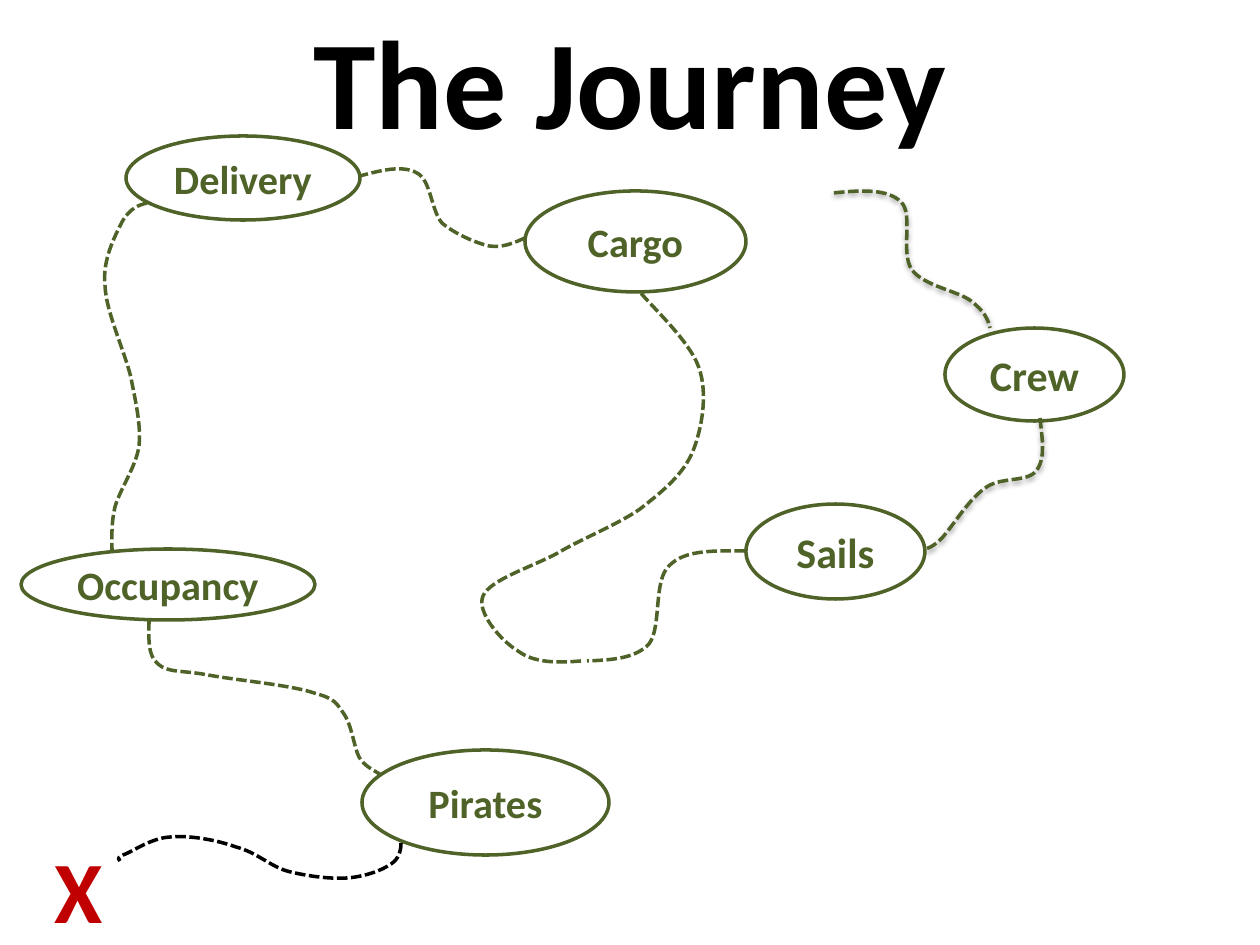
from dataclasses import dataclass

from pptx import Presentation
from pptx.dml.color import RGBColor
from pptx.enum.dml import MSO_LINE
from pptx.enum.shapes import MSO_SHAPE
from pptx.enum.text import MSO_ANCHOR as Anchor, MSO_AUTO_SIZE as AutoSize, PP_ALIGN as Align
from pptx.oxml import parse_xml
from pptx.oxml.ns import nsdecls, qn
from pptx.util import Pt

SCALE = 914400 / 126  # EMU per px


@dataclass(frozen=True)
class Theme:
    font: str = "Calibri"
    ink: str = "000000"
    green: str = "4F6228"
    red: str = "C00000"
    title: int = 72
    mark: int = 50
    large: int = 24
    small: int = 23
    line: int = 2


THEME = Theme()

# Stops on the journey: label, type size, (left, top, width, height)
STOPS = [
    ("Crew", THEME.large, (945, 328, 179, 93)),
    ("Sails", THEME.large, (746, 504, 179, 95)),
    ("Cargo", THEME.small, (525, 191, 221, 101)),
    ("Delivery", THEME.small, (126, 136, 234, 84)),
    ("Occupancy", THEME.small, (21, 549, 294, 71)),
    ("Pirates", THEME.small, (362, 750, 247, 105)),
]

# Trails as Bezier points: a start, then two controls and an end per curve
START_TO_CREW = [
    (834, 193), (862, 190), (888, 189), (901, 202), (914, 214), (900, 253), (912, 270),
    (924, 286), (958, 291), (971, 301), (984, 311), (988, 319), (990, 328)]
CREW_TO_SAILS = [
    (1040, 418), (1042, 438), (1046, 459), (1036, 471), (1027, 483), (999, 476), (984, 489),
    (968, 500), (951, 529), (941, 539), (931, 549), (924, 549), (924, 549)]
SAILS_TO_BAY = [
    (745, 551), (716, 551), (685, 549), (669, 566), (653, 581), (662, 627), (649, 644),
    (635, 659), (611, 660), (587, 661)]
BAY_TO_CARGO = [
    (581, 661), (557, 663), (534, 663), (518, 651), (501, 641), (476, 612), (483, 596),
    (490, 580), (529, 568), (556, 554), (581, 539), (617, 525), (640, 509),
    (663, 491), (683, 475), (693, 451), (702, 428), (708, 394), (699, 368),
    (690, 341), (651, 306), (640, 292)]
CARGO_TO_DELIVERY = [
    (525, 238), (514, 243), (503, 248), (489, 246), (476, 243), (455, 234), (442, 223),
    (431, 210), (431, 180), (417, 173), (403, 165), (382, 170), (360, 176)]
DELIVERY_TO_OCCUPANCY = [
    (147, 203), (139, 205), (130, 208), (122, 222), (115, 236), (102, 260), (105, 286),
    (106, 312), (125, 352), (131, 378), (136, 404), (141, 425), (139, 446),
    (136, 467), (120, 489), (115, 507), (111, 524), (112, 537), (112, 551)]
OCCUPANCY_TO_PIRATES = [
    (149, 620), (149, 638), (147, 655), (158, 664), (168, 673), (181, 670), (208, 675),
    (234, 680), (291, 685), (314, 693), (336, 699), (336, 703), (344, 714),
    (352, 726), (354, 747), (359, 757), (365, 767), (374, 770), (381, 775)]
PIRATES_TO_X = [
    (401, 843), (401, 850), (399, 859), (391, 864), (381, 871), (363, 877), (346, 878),
    (329, 879), (306, 876), (287, 871), (270, 866), (256, 852), (236, 847),
    (217, 840), (189, 835), (170, 837), (151, 838), (132, 852), (123, 855),
    (115, 859), (120, 859), (120, 861)]


def emu(*lengths):
    return [round(length * SCALE) for length in lengths]


def write(frame, text, *, size, color, align=Align.LEFT, anchor=Anchor.TOP,
          wrap=True, fit=AutoSize.NONE):
    """Fill a text frame with one bold paragraph."""
    frame.word_wrap, frame.auto_size, frame.vertical_anchor = wrap, fit, anchor
    para = frame.paragraphs[0]
    para.alignment = align
    span = para.add_run()
    span.text = text
    font = span.font
    font.name, font.size, font.bold = THEME.font, Pt(size), True
    font.color.rgb = RGBColor.from_string(color)


def outline(shape, color):
    shape.shadow.inherit = False
    shape.fill.background()
    shape.line.color.rgb = RGBColor.from_string(color)
    shape.line.width = Pt(THEME.line)


def add_text(page, text, area, **style):
    box = page.shapes.add_textbox(*emu(*area))
    write(box.text_frame, text, **style)


def add_stop(page, label, size, area):
    oval = page.shapes.add_shape(MSO_SHAPE.OVAL, *emu(*area))
    outline(oval, THEME.green)
    write(oval.text_frame, label, size=size, color=THEME.green,
          align=Align.CENTER, anchor=Anchor.MIDDLE, wrap=False)


def curve_samples(points, steps=16):
    """Points lying on the curves, which give the trail its true bounds."""
    for first in range(0, len(points) - 1, 3):
        curve = points[first:first + 4]
        for step in range(1, steps + 1):
            t = step / steps
            weights = ((1 - t) ** 3, 3 * t * (1 - t) ** 2, 3 * t * t * (1 - t), t ** 3)
            yield tuple(sum(w * point[axis] for w, point in zip(weights, curve))
                        for axis in (0, 1))


def add_trail(page, points, color=THEME.green, shadow=False):
    builder = page.shapes.build_freeform(*points[0], scale=SCALE)
    builder.add_line_segments(list(curve_samples(points)), close=False)
    trail = builder.convert_to_shape()
    outline(trail, color)
    trail.line.dash_style = MSO_LINE.SQUARE_DOT
    properties = trail._element.spPr

    # Swap the straight segments for true curves
    left, top = round(trail.left / SCALE), round(trail.top / SCALE)
    outline_path = properties.find(".//" + qn("a:path"))
    for segment in outline_path.findall(qn("a:lnTo")):
        outline_path.remove(segment)
    for first in range(1, len(points), 3):
        marks = "".join(f'<a:pt x="{x - left}" y="{y - top}"/>'
                        for x, y in points[first:first + 3])
        outline_path.append(parse_xml(
            f'<a:cubicBezTo {nsdecls("a")}>{marks}</a:cubicBezTo>'))

    if shadow:
        properties.find(qn("a:effectLst")).append(parse_xml(
            f'<a:outerShdw {nsdecls("a")} blurRad="40000" dist="20000" dir="5400000" '
            f'rotWithShape="0"><a:srgbClr val="{THEME.ink}"><a:alpha val="38000"/>'
            '</a:srgbClr></a:outerShdw>'))


def main():
    deck = Presentation()
    deck.slide_width, deck.slide_height = emu(1260, 945)
    page = deck.slides.add_slide(deck.slide_layouts[6])

    # Title
    add_text(page, "The Journey", (63, 21, 1134, 116), size=THEME.title,
             color=THEME.ink, align=Align.CENTER, anchor=Anchor.MIDDLE)

    # Trails
    for points in (START_TO_CREW, CREW_TO_SAILS):
        add_trail(page, points, shadow=True)
    for points in (SAILS_TO_BAY, BAY_TO_CARGO, CARGO_TO_DELIVERY,
                   DELIVERY_TO_OCCUPANCY, OCCUPANCY_TO_PIRATES):
        add_trail(page, points)
    add_trail(page, PIRATES_TO_X, color=THEME.ink)

    # Stops and the final mark
    for label, size, area in STOPS:
        add_stop(page, label, size, area)
    add_text(page, "X", (42, 830, 136, 118), size=THEME.mark, color=THEME.red,
             fit=AutoSize.SHAPE_TO_FIT_TEXT)

    deck.save("out.pptx")


if __name__ == "__main__":
    main()
